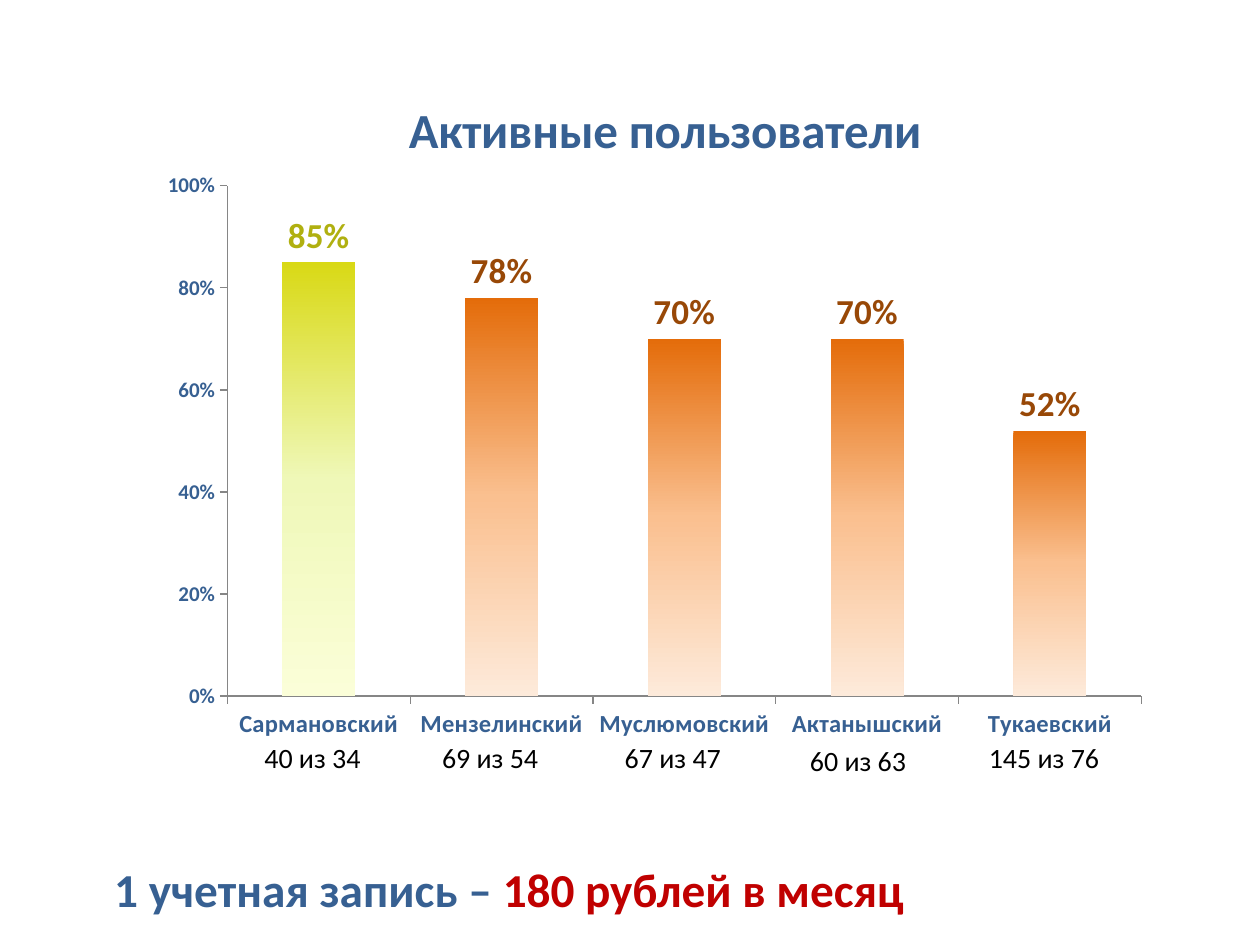
"""Build a slide with a column chart of active users and the price of an account."""
import copy
from dataclasses import dataclass

import pptx
import pptx.chart.data
import pptx.dml.color
import pptx.enum.chart
import pptx.enum.text
import pptx.oxml
import pptx.oxml.ns
import pptx.util

RGBColor = pptx.dml.color.RGBColor
BLUE = RGBColor(0x37, 0x60, 0x92)
RED = RGBColor(0xC0, 0x00, 0x00)
BLACK = RGBColor(0x00, 0x00, 0x00)
GRAY = RGBColor(0x86, 0x86, 0x86)
BROWN = RGBColor(0x98, 0x48, 0x07)
OLIVE = RGBColor(0xB0, 0xB0, 0x10)
ORANGES = (RGBColor(0xE4, 0x6C, 0x0A), RGBColor(0xFA, 0xC0, 0x90), RGBColor(0xFD, 0xEA, 0xDA))
LIMES = (RGBColor(0xD9, 0xD9, 0x15), RGBColor(0xEF, 0xF8, 0xB8), RGBColor(0xFB, 0xFE, 0xD8))
FONT = "Calibri"
TITLE = "Активные пользователи"
WIDTH, HEIGHT = pptx.util.Inches(10), pptx.util.Inches(7.5)


@dataclass(frozen=True)
class Box:
    """A frame in shares of the slide's size."""
    left: float
    top: float
    width: float
    height: float

    def emu(self) -> tuple[int, ...]:
        """Return left, top, width and height in EMU."""
        return (int(self.left * WIDTH), int(self.top * HEIGHT),
                int(self.width * WIDTH), int(self.height * HEIGHT))


@dataclass(frozen=True)
class District:
    """A district with its share of active users and the note below its column."""
    name: str
    share: float
    note: str
    box: Box


DISTRICTS = (
    District("Сармановский", 0.85, "40 из 34", Box(0.2, 0.777, 0.108, 0.05)),
    District("Мензелинский", 0.78, "69 из 54", Box(0.341, 0.777, 0.108, 0.05)),
    District("Муслюмовский", 0.7, "67 из 47", Box(0.486, 0.777, 0.108, 0.05)),
    District("Актанышский", 0.7, "60 из 63", Box(0.633, 0.78, 0.108, 0.05)),
    District("Тукаевский", 0.52, "145 из 76", Box(0.775, 0.777, 0.136, 0.05)),
)


def style_font(font, size: float, color: RGBColor, bold: bool = True) -> None:
    """Set the typeface, size, colour and weight of a font."""
    font.name = FONT
    font.size = pptx.util.Pt(size)
    font.bold = bold
    font.color.rgb = color


def set_layout(parent, index: int, **shares: float) -> None:
    """Give a chart part a fixed place in shares of the chart's size."""
    for old in parent.findall(pptx.oxml.ns.qn("c:layout")):
        parent.remove(old)
    target = '<c:layoutTarget val="inner"/>' if "w" in shares else ""
    modes = "".join(f'<c:{key}Mode val="edge"/>' for key in shares if key in "xy")
    values = "".join(f'<c:{key} val="{value}"/>' for key, value in shares.items())
    parent.insert(index, pptx.oxml.parse_xml(
        f'<c:layout {pptx.oxml.ns.nsdecls("c")}><c:manualLayout>'
        f"{target}{modes}{values}</c:manualLayout></c:layout>"))


def fill_gradients(chart, fills: dict) -> None:
    """Fill chart parts with three-stop gradients that run downwards."""
    for fill in fills:
        fill.gradient()
        fill.gradient_angle = 270
    for stops in chart.element.iter(pptx.oxml.ns.qn("a:gsLst")):
        stops.append(copy.deepcopy(stops[-1]))
    for fill, colors in fills.items():
        for i, (stop, color) in enumerate(zip(fill.gradient_stops, colors)):
            stop.position = i / 2
            stop.color.rgb = color


def add_user_chart(s, box: Box) -> None:
    """Add the column chart of active users."""
    data = pptx.chart.data.CategoryChartData(number_format="0%")
    data.categories = [d.name for d in DISTRICTS]
    data.add_series(TITLE, [d.share for d in DISTRICTS])
    kind = pptx.enum.chart.XL_CHART_TYPE.COLUMN_CLUSTERED
    chart = s.shapes.add_chart(kind, *box.emu(), data).chart
    style_font(chart.font, 10, BLACK, False)
    chart.has_legend = False
    chart.has_title = True
    p = chart.chart_title.text_frame.paragraphs[0]
    p.add_run().text = TITLE
    style_font(p.font, 28, BLUE)
    set_layout(chart.element.find(".//" + pptx.oxml.ns.qn("c:title")), 1, x=0.25, y=0.05)
    set_layout(chart.element.find(".//" + pptx.oxml.ns.qn("c:plotArea")), 0,
               x=0.08, y=0.19, w=0.9, h=0.73)

    for axis, size in ((chart.category_axis, 14), (chart.value_axis, 12)):
        style_font(axis.tick_labels.font, size, BLUE)
        axis.has_major_gridlines = False
        axis.major_tick_mark = pptx.enum.chart.XL_TICK_MARK.OUTSIDE
        axis.format.line.color.rgb = GRAY
    axis = chart.value_axis
    axis.minimum_scale, axis.maximum_scale, axis.major_unit = 0, 1, 0.2
    axis.tick_labels.number_format = "0%"
    axis.tick_labels.number_format_is_linked = False

    plot = chart.plots[0]
    plot.gap_width = 150
    plot.vary_by_categories = False
    series = plot.series[0]
    labels = series.data_labels
    labels.show_value = True
    labels.number_format = "0%"
    labels.number_format_is_linked = False
    labels.position = pptx.enum.chart.XL_LABEL_POSITION.OUTSIDE_END
    style_font(labels.font, 20, BROWN)
    leader = series.points[0]
    style_font(leader.data_label.font, 20, OLIVE)
    leader.data_label.position = labels.position
    fill_gradients(chart, {series.format.fill: ORANGES, leader.format.fill: LIMES})


def add_text(s, box: Box, runs: dict[str, RGBColor], size: float,
             bold: bool = False, centered: bool = False) -> None:
    """Add a one-paragraph text box with a colour for each run."""
    tf = s.shapes.add_textbox(*box.emu()).text_frame
    tf.word_wrap = True
    p = tf.paragraphs[0]
    if centered:
        p.alignment = pptx.enum.text.PP_ALIGN.CENTER
    p.font.name, p.font.size, p.font.bold = FONT, pptx.util.Pt(size), bold
    for text, color in runs.items():
        r = p.add_run()
        r.text = text
        r.font.color.rgb = color


def main() -> None:
    """Build and save the slide."""
    prs = pptx.Presentation()
    prs.slide_width, prs.slide_height = WIDTH, HEIGHT
    s = prs.slides.add_slide(prs.slide_layouts[6])
    add_user_chart(s, Box(0.116, 0.056, 0.806, 0.74))
    for d in DISTRICTS:
        add_text(s, d.box, {d.note: BLACK}, 16)
    add_text(s, Box(0.008, 0.904, 0.792, 0.075),
             {"1 учетная запись – ": BLUE, "180 рублей в месяц": RED},
             27, bold=True, centered=True)
    prs.save("out.pptx")


if __name__ == "__main__":
    main()
